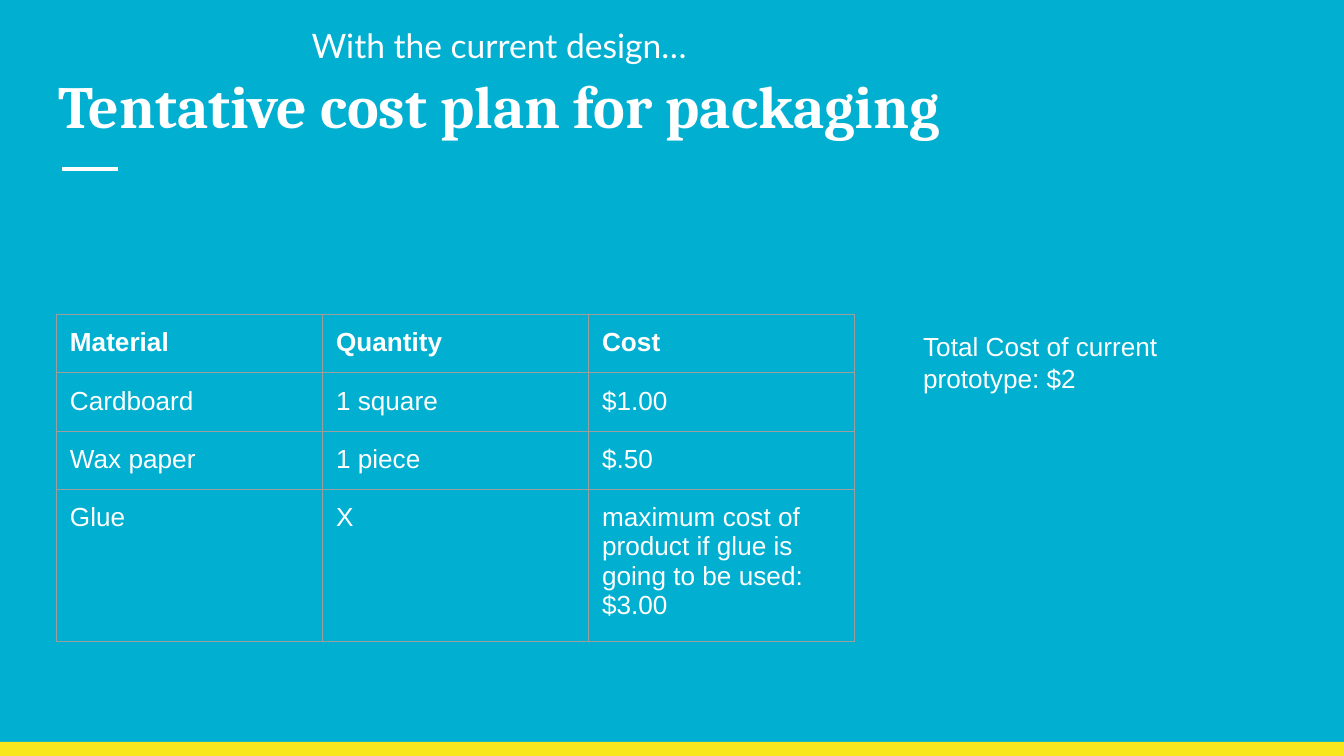
from lxml import etree
from pptx import Presentation
from pptx.dml.color import RGBColor
from pptx.enum.shapes import MSO_CONNECTOR, MSO_SHAPE
from pptx.oxml import parse_xml
from pptx.oxml.ns import nsdecls, qn
from pptx.util import Inches, Pt

WHITE = "FFFFFF"
BORDER = "9E9E9E"
SIDES = ("left", "right", "top", "bottom")


def color(value):
    return RGBColor.from_string(value)


def write_text(frame, text, font_format):
    paragraph = frame.paragraphs[0]
    run = paragraph.add_run()
    run.text = text
    for name, value in font_format.items():
        setattr(run.font, name, value)
    run.font.color.rgb = color(WHITE)
    return paragraph


# Widescreen slide, 16 to 9
presentation = Presentation()
presentation.slide_width = Inches(10)
presentation.slide_height = Inches(10) * 9 // 16
slide = presentation.slides.add_slide(presentation.slide_layouts[6])
slide.background.fill.solid()
slide.background.fill.fore_color.rgb = color("01AFD1")

# Yellow strip along the bottom
strip = slide.shapes.add_shape(
    MSO_SHAPE.RECTANGLE, 0, Inches(5.52), Inches(10), Inches(0.11))
strip.shadow.inherit = False
strip.fill.solid()
strip.fill.fore_color.rgb = color("F8E71C")
strip.line.fill.background()

# Short rule under the title
rule = slide.shapes.add_connector(
    MSO_CONNECTOR.STRAIGHT, Inches(0.46), Inches(1.26), Inches(0.88), Inches(1.26))
rule.line.color.rgb = color(WHITE)
rule.line.width = Pt(2.25)
etree.SubElement(rule._element.spPr, qn("a:effectLst"))

# Lead-in, title and total
body_format = {"name": "Arial", "size": Pt(14), "bold": False}
texts = [
    ("With the current design…", (2.22, 0.04, 9.32, 3.45),
     {"name": "Lato", "size": Pt(18)}, {"line_spacing": 1.15, "space_after": Pt(16)}),
    ("Tentative cost plan for packaging", (0.34, 0.41, 9.32, 0.71),
     {"name": "Cambria", "size": Pt(32), "bold": True}, {}),
    ("Total Cost of current prototype: $2", (6.77, 2.36, 2.25, 0.95),
     body_format, {}),
]
for text, box, font_format, paragraph_format in texts:
    shape = slide.shapes.add_textbox(*[Inches(length) for length in box])
    shape.text_frame.word_wrap = True
    for side in SIDES:
        setattr(shape.text_frame, f"margin_{side}", Inches(0.1))
    paragraph = write_text(shape.text_frame, text, font_format)
    for name, value in paragraph_format.items():
        setattr(paragraph, name, value)

# Cost table
costs = [
    ("Material", "Quantity", "Cost"),
    ("Cardboard", "1 square", "$1.00"),
    ("Wax paper", "1 piece", "$.50"),
    ("Glue", "X", "maximum cost of product if glue is going to be used: $3.00"),
]
table_frame = slide.shapes.add_table(
    len(costs), 3, Inches(0.42), Inches(2.34), Inches(5.94), Inches(1.68))
table = table_frame.table
table.horz_banding = False
for column in table.columns:
    column.width = Inches(1.98)
for row_index, row in enumerate(costs):
    table.rows[row_index].height = Inches(0.42)
    for column_index, text in enumerate(row):
        cell = table.cell(row_index, column_index)
        write_text(cell.text_frame, text, {**body_format, "bold": row_index == 0})
        for side in SIDES:
            setattr(cell, f"margin_{side}", Inches(0.1))
        cell.fill.background()
        properties = cell._tc.get_or_add_tcPr()
        for position, edge in enumerate(("lnL", "lnR", "lnT", "lnB")):
            properties.insert(position, parse_xml(
                f'<a:{edge} {nsdecls("a")} w="{Pt(0.75)}"><a:solidFill>'
                f'<a:srgbClr val="{BORDER}"/></a:solidFill></a:{edge}>'))
table_frame.width = table_frame.height = Inches(3.28)

presentation.save("out.pptx")
